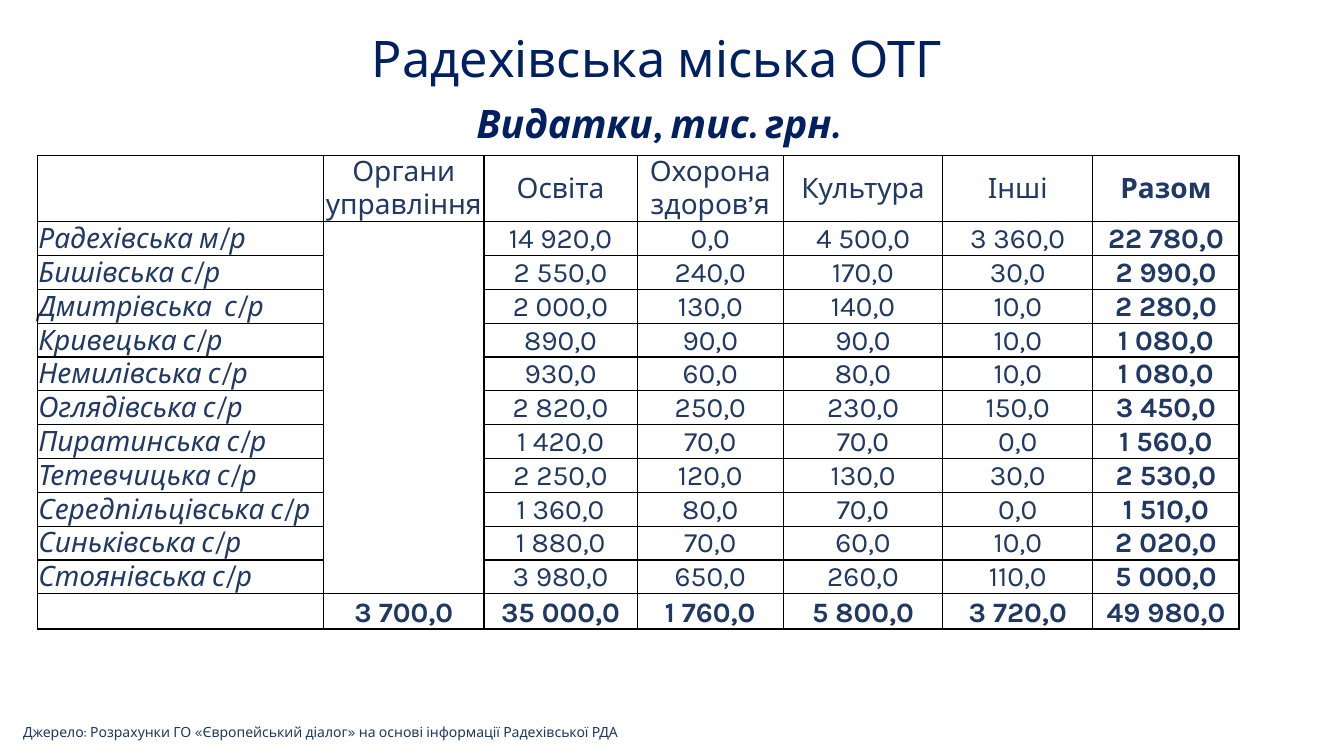
"""Build the slide with the spending table of the Radekhiv community."""
from lxml import etree
from pptx import Presentation
from pptx.dml.color import RGBColor
from pptx.enum.text import MSO_ANCHOR, MSO_AUTO_SIZE, PP_ALIGN
from pptx.oxml.ns import qn
from pptx.util import Inches, Pt

LEFT, CENTER = PP_ALIGN.LEFT, PP_ALIGN.CENTER
TOP, MIDDLE, BOTTOM = MSO_ANCHOR.TOP, MSO_ANCHOR.MIDDLE, MSO_ANCHOR.BOTTOM

TITLE = "Радехівська міська ОТГ"
SUBTITLE = "Видатки, тис. грн."
SOURCE = "Джерело: Розрахунки ГО «Європейський діалог» на основі інформації Радехівської РДА"
HEADER = ("", "Органи управління", "Освіта", "Охорона здоров’я", "Культура", "Інші", "Разом")
COUNCILS = [
    ("Радехівська м/р", "", "14 920,0", "0,0", "4 500,0", "3 360,0", "22 780,0"),
    ("Бишівська с/р", "", "2 550,0", "240,0", "170,0", "30,0", "2 990,0"),
    ("Дмитрівська  с/р", "", "2 000,0", "130,0", "140,0", "10,0", "2 280,0"),
    ("Кривецька с/р", "", "890,0", "90,0", "90,0", "10,0", "1 080,0"),
    ("Немилівська с/р", "", "930,0", "60,0", "80,0", "10,0", "1 080,0"),
    ("Оглядівська с/р", "", "2 820,0", "250,0", "230,0", "150,0", "3 450,0"),
    ("Пиратинська с/р", "", "1 420,0", "70,0", "70,0", "0,0", "1 560,0"),
    ("Тетевчицька с/р", "", "2 250,0", "120,0", "130,0", "30,0", "2 530,0"),
    ("Середпільцівська с/р", "", "1 360,0", "80,0", "70,0", "0,0", "1 510,0"),
    ("Синьківська с/р", "", "1 880,0", "70,0", "60,0", "10,0", "2 020,0"),
    ("Стоянівська с/р", "", "3 980,0", "650,0", "260,0", "110,0", "5 000,0"),
]
TOTALS = ("", "3 700,0", "35 000,0", "1 760,0", "5 800,0", "3 720,0", "49 980,0")

THEME = {
    "font": "Karla", "navy": "002060", "blue": "203864", "border": "000000",
    "title": 36, "subtitle": 28, "table": 20, "source": 10,
}
SLIDE_SIZE = (13.33, 7.5)
TITLE_BOX = (0.37, 0.12, 12.29, 0.98)
SUBTITLE_BOX = (1.28, 0.99, 10.49, 0.45)
SOURCE_BOX = (0.13, 7.13, 6.18, 0.27)
TABLE_ORIGIN = (0.37, 1.54)
COLUMN_WIDTHS = (2.84, 1.59, 1.52, 1.45, 1.58, 1.49, 1.45)
HEADER_HEIGHT, ROW_HEIGHT = 0.66, 0.33
CELL_FORMAT = {
    "margin_left": Inches(0.01), "margin_right": Inches(0.01),
    "margin_top": Inches(0.01), "margin_bottom": 0,
}


def write(frame, text, size, color, align=LEFT, spacing=None, bold=False, italic=False):
    paragraph = frame.paragraphs[0]
    paragraph.alignment = align
    paragraph.line_spacing = spacing
    if not text:
        paragraph.font.size = Pt(THEME[size])
        return
    run = paragraph.add_run()
    run.text = text
    values = {"name": THEME["font"], "size": Pt(THEME[size]), "bold": bold, "italic": italic}
    for name, value in values.items():
        setattr(run.font, name, value)
    run.font.color.rgb = RGBColor.from_string(THEME[color])


def place(shape, box, anchor):
    for name, value in zip(("left", "top", "width", "height"), box):
        setattr(shape, name, Inches(value))
    frame = shape.text_frame
    frame.word_wrap = True
    frame.auto_size = MSO_AUTO_SIZE.NONE
    frame.vertical_anchor = anchor
    return frame


def add_text(slide, box, text, **style):
    shape = slide.shapes.add_textbox(0, 0, 0, 0)
    write(place(shape, box, TOP), text, **style)


def outline(cell):
    properties = cell._tc.get_or_add_tcPr()
    for side in ("a:lnL", "a:lnR", "a:lnT", "a:lnB"):
        line = etree.SubElement(properties, qn(side), w=str(Pt(1)))
        fill = etree.SubElement(line, qn("a:solidFill"))
        etree.SubElement(fill, qn("a:srgbClr"), val=THEME["border"])


def add_spending(slide):
    rows = [HEADER, *COUNCILS, TOTALS]
    heights = [HEADER_HEIGHT] + [ROW_HEIGHT] * (len(rows) - 1)
    box = (*TABLE_ORIGIN, sum(COLUMN_WIDTHS), sum(heights))
    table = slide.shapes.add_table(len(rows), len(HEADER), *map(Inches, box)).table
    table.first_row = table.horz_banding = False
    for column, width in zip(table.columns, COLUMN_WIDTHS):
        column.width = Inches(width)
    last_row, last_column = len(rows) - 1, len(HEADER) - 1
    for row_index, (values, height) in enumerate(zip(rows, heights)):
        table.rows[row_index].height = Inches(height)
        for column_index, text in enumerate(values):
            cell = table.cell(row_index, column_index)
            is_name = column_index == 0
            for name, value in CELL_FORMAT.items():
                setattr(cell, name, value)
            cell.vertical_anchor = MIDDLE if is_name or row_index == 0 else BOTTOM
            outline(cell)
            cell.fill.background()
            write(cell.text_frame, text, "table", "blue",
                  align=LEFT if is_name else CENTER,
                  bold=row_index == last_row or column_index == last_column,
                  italic=is_name)
    table.cell(1, 1).merge(table.cell(len(COUNCILS), 1))


def main():
    presentation = Presentation()
    presentation.slide_width, presentation.slide_height = map(Inches, SLIDE_SIZE)
    slide = presentation.slides.add_slide(presentation.slide_layouts[5])
    title = place(slide.shapes.title, TITLE_BOX, MIDDLE)
    write(title, TITLE, "title", "navy", align=CENTER, spacing=0.9)
    add_text(slide, SUBTITLE_BOX, SUBTITLE, size="subtitle", color="navy",
             align=CENTER, spacing=0.9, bold=True, italic=True)
    add_spending(slide)
    add_text(slide, SOURCE_BOX, SOURCE, size="source", color="blue")
    presentation.save("out.pptx")


if __name__ == "__main__":
    main()
